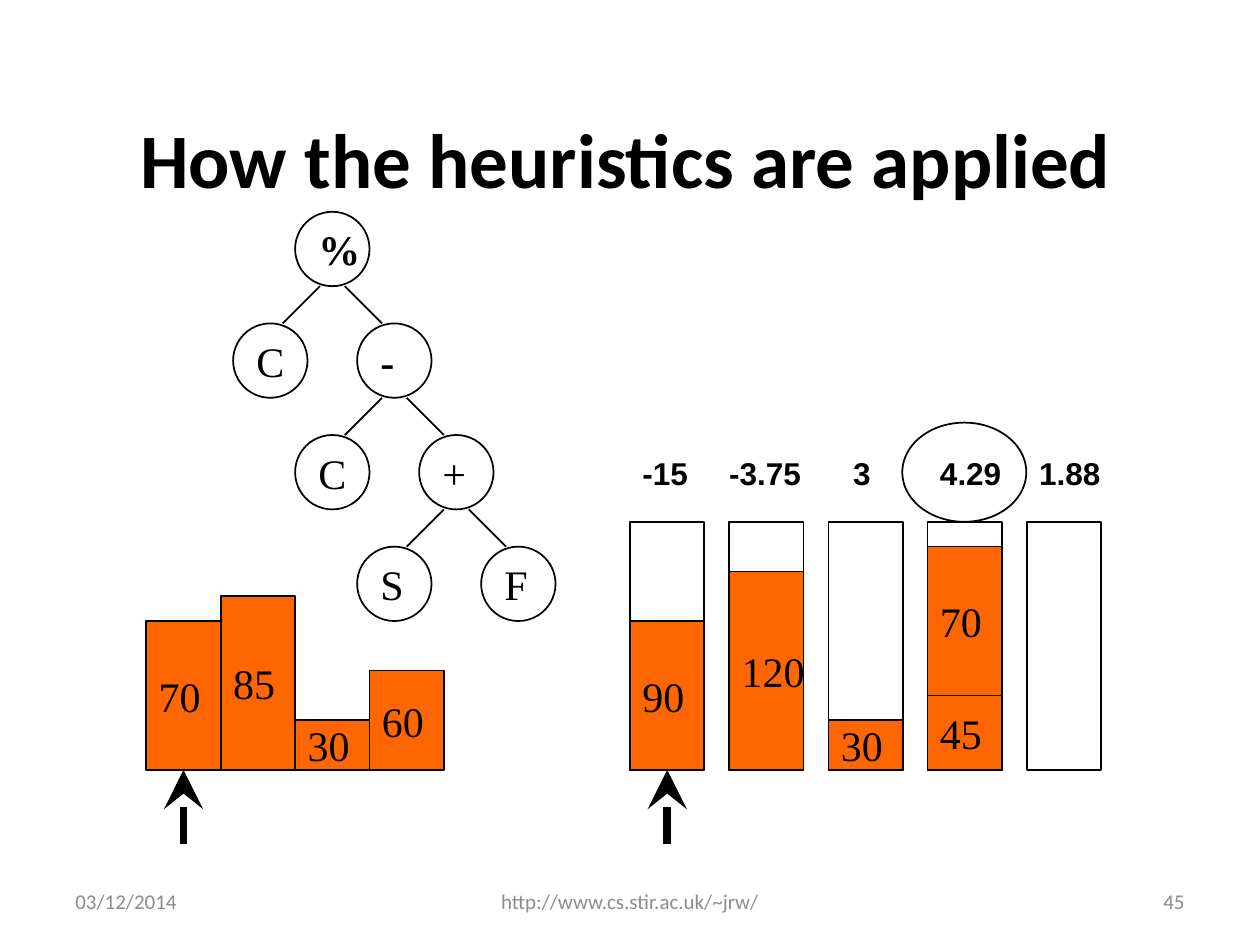
from dataclasses import dataclass

from lxml.etree import SubElement
from pptx import Presentation
from pptx.dml.color import RGBColor
from pptx.enum.shapes import MSO_CONNECTOR, MSO_SHAPE
from pptx.enum.text import MSO_ANCHOR, PP_ALIGN
from pptx.oxml.ns import qn
from pptx.util import Cm, Pt

COLOURS = {"ink": "000000", "paper": "FFFFFF", "item": "FF6600", "footer": "8C8C8C"}

SIDE = 1.5  # width of a bar and diameter of a tree node
FLOOR = 15.52
ROOT_LEFT, ROOT_TOP = 5.95, 4.27
COLUMN, LEVEL = 1.25, 2.25  # sideways and downward step in the tree
BIN_LEFT, BIN_STEP, BIN_HEIGHT = 12.7, 2.0, 5.0
QUEUE_LEFT = 2.95


@dataclass
class Node:
    symbol: str
    column: int
    level: int
    parent: int | None = None
    bold: bool = False

    @property
    def left(self) -> float:
        return ROOT_LEFT + self.column * COLUMN

    @property
    def top(self) -> float:
        return ROOT_TOP + self.level * LEVEL


@dataclass
class Item:
    size: str
    height: float


@dataclass
class Bin:
    score: str
    score_left: float
    score_width: float
    items: list[Item]


@dataclass
class Footer:
    text: str
    left: float
    width: float
    align: PP_ALIGN


NODES = [
    Node("%", 0, 0, bold=True),
    Node("C", -1, 1, parent=0),
    Node("-", 1, 1, parent=0, bold=True),
    Node("C", 0, 2, parent=2),
    Node("+", 2, 2, parent=2),
    Node("S", 1, 3, parent=4),
    Node("F", 3, 3, parent=4),
]
QUEUE = [Item("70", 3), Item("85", 3.5), Item("30", 1), Item("60", 2)]
BINS = [
    Bin("-15", 12.7, 1.42, [Item("90", 3)]),
    Bin("-3.75", 14.45, 1.96, [Item("120", 4)]),
    Bin("3", 16.95, 0.86, [Item("30", 1)]),
    Bin("4.29", 18.7, 1.75, [Item("45", 1.5), Item("70", 3)]),
    Bin("1.88", 20.7, 1.75, []),
]
FOOTERS = [
    Footer("03/12/2014", 1.27, 5.93, PP_ALIGN.LEFT),
    Footer("http://www.cs.stir.ac.uk/~jrw/", 8.68, 8.04, PP_ALIGN.CENTER),
    Footer("45", 18.2, 5.93, PP_ALIGN.RIGHT),
]


def colour(name: str) -> RGBColor:
    return RGBColor.from_string(COLOURS[name])


def write(shape, text: str, *, font="Times New Roman", size=24, ink="ink", bold=False,
          align=PP_ALIGN.LEFT, anchor=MSO_ANCHOR.MIDDLE, wrap=False) -> None:
    frame = shape.text_frame
    frame.word_wrap = wrap
    frame.vertical_anchor = anchor
    para = frame.paragraphs[0]
    para.alignment = align
    span = para.add_run()
    span.text = text
    span.font.name = font
    span.font.size = Pt(size)
    span.font.bold = bold
    span.font.color.rgb = colour(ink)


def add_outline(page, kind: MSO_SHAPE, left: float, top: float, width: float,
                height: float, fill: str | None = "paper"):
    shape = page.shapes.add_shape(kind, Cm(left), Cm(top), Cm(width), Cm(height))
    shape.shadow.inherit = False
    if fill:
        shape.fill.solid()
        shape.fill.fore_color.rgb = colour(fill)
    else:
        shape.fill.background()
    shape.line.color.rgb = colour("ink")
    shape.line.width = Pt(1)
    return shape


def add_line(page, start: tuple[float, float], end: tuple[float, float],
             width: float = 1, arrow: bool = False) -> None:
    line = page.shapes.add_connector(MSO_CONNECTOR.STRAIGHT, *map(Cm, start + end))
    line.line.color.rgb = colour("ink")
    line.line.width = Pt(width)
    if arrow:
        SubElement(line.line._get_or_add_ln(), qn("a:tailEnd"),
                   {"type": "stealth", "w": "lg", "len": "lg"})
    SubElement(line._element.spPr, qn("a:effectLst"))


def add_item(page, item: Item, left: float, bottom: float) -> None:
    bar = add_outline(page, MSO_SHAPE.RECTANGLE, left, bottom - item.height,
                      SIDE, item.height, "item")
    write(bar, item.size)


def add_pointer(page, left: float) -> None:
    centre = left + SIDE / 2
    add_line(page, (centre, FLOOR + 1.5), (centre, FLOOR), width=4.5, arrow=True)


def add_bin(page, bin_: Bin, left: float) -> None:
    add_outline(page, MSO_SHAPE.RECTANGLE, left, FLOOR - BIN_HEIGHT, SIDE, BIN_HEIGHT)
    bottom = FLOOR
    for item in bin_.items:
        add_item(page, item, left, bottom)
        bottom -= item.height
    box = page.shapes.add_textbox(Cm(bin_.score_left), Cm(9.02), Cm(bin_.score_width), Cm(1.02))
    write(box, bin_.score, font="Arial", size=18, bold=True, anchor=MSO_ANCHOR.TOP)


def add_node(page, node: Node) -> None:
    circle = add_outline(page, MSO_SHAPE.OVAL, node.left, node.top, SIDE, SIDE)
    write(circle, node.symbol, bold=node.bold)
    if node.parent is not None:
        parent = NODES[node.parent]
        shift = 0.25 if node.column > parent.column else -0.25
        add_line(page, (parent.left + SIDE / 2 + shift, parent.top + SIDE),
                 (node.left + SIDE / 2 - shift, node.top))


def main() -> None:
    deck = Presentation()
    deck.slide_width, deck.slide_height = Cm(25.4), Cm(19.05)
    page = deck.slides.add_slide(deck.slide_layouts[5])

    # Title
    title = page.shapes.title
    title.left, title.top, title.width, title.height = map(Cm, (1.19, 1.27, 22.86, 3.81))
    write(title, "How the heuristics are applied", font="Calibri", size=44, bold=True,
          align=PP_ALIGN.CENTER, wrap=True)

    # Items waiting to be packed
    for index, item in enumerate(QUEUE):
        add_item(page, item, QUEUE_LEFT + index * SIDE, FLOOR)

    # Bins with their scores, the best one circled
    for index, bin_ in enumerate(BINS):
        add_bin(page, bin_, BIN_LEFT + index * BIN_STEP)
    add_outline(page, MSO_SHAPE.OVAL, 18.19, 8.52, 2.5, 2, fill=None)

    # Current item and current bin
    for left in (QUEUE_LEFT, BIN_LEFT):
        add_pointer(page, left)

    # Expression tree
    for node in NODES:
        add_node(page, node)

    # Footer
    for footer in FOOTERS:
        box = page.shapes.add_textbox(Cm(footer.left), Cm(17.65), Cm(footer.width), Cm(1.02))
        write(box, footer.text, font="Calibri", size=12, ink="footer",
              align=footer.align, wrap=True)

    deck.save("out.pptx")


if __name__ == "__main__":
    main()
